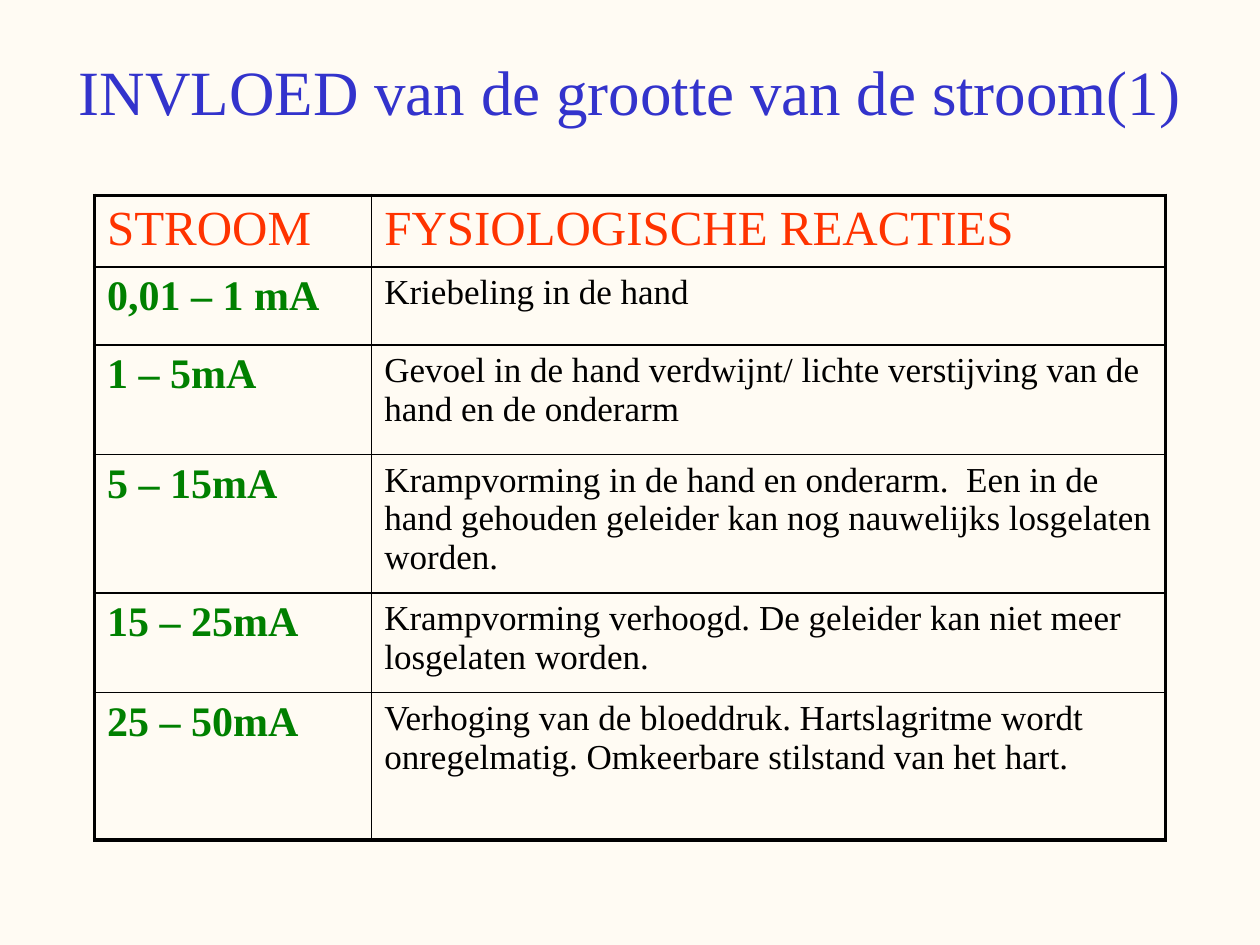
"""Build a slide with a table of physiological reactions to electric current."""
from lxml.etree import SubElement
from pptx import Presentation
from pptx.dml.color import RGBColor
from pptx.enum.text import MSO_ANCHOR, PP_ALIGN
from pptx.oxml.ns import qn
from pptx.util import Inches, Pt

CREAM = RGBColor(0xFF, 0xFB, 0xF3)
BLUE = RGBColor(0x33, 0x33, 0xCC)
RED = RGBColor(0xFF, 0x33, 0x00)
GREEN = RGBColor(0x00, 0x80, 0x00)
BLACK = RGBColor(0x00, 0x00, 0x00)
FONT = "Times New Roman"
THICK, THIN = 2.25, 1

COLUMN_WIDTHS = [2.2, 6.3]
ROW_HEIGHTS = [0.55, 0.62, 0.87, 1.1, 0.79, 1.17]
ROWS = [
    ("STROOM", "FYSIOLOGISCHE REACTIES"),
    ("0,01 – 1 mA", "Kriebeling in de hand"),
    ("1 – 5mA", "Gevoel in de hand verdwijnt/ lichte verstijving van de hand en de onderarm"),
    ("5 – 15mA", "Krampvorming in de hand en onderarm.  Een in de hand gehouden geleider "
     "kan nog nauwelijks losgelaten worden."),
    ("15 – 25mA", "Krampvorming verhoogd. De geleider kan niet meer losgelaten worden."),
    ("25 – 50mA", "Verhoging van de bloeddruk. Hartslagritme wordt onregelmatig. "
     "Omkeerbare stilstand van het hart."),
]
HEADER_FORMAT = {"size": 28, "color": RED}
BODY_FORMATS = [
    {"size": 24, "color": GREEN, "bold": True},
    {"size": 20, "color": BLACK},
]


def write_text(frame, text, size, color, bold=False, align=PP_ALIGN.LEFT):
    frame.word_wrap = True
    paragraph = frame.paragraphs[0]
    paragraph.alignment = align
    run = paragraph.add_run()
    run.text = text
    run.font.name = FONT
    run.font.size = Pt(size)
    run.font.bold = bold
    run.font.color.rgb = color


def draw_borders(cell, widths):
    properties = cell._tc.get_or_add_tcPr()
    for side, width in widths.items():
        line = SubElement(properties, qn(f"a:ln{side}"), w=str(Pt(width)))
        fill = SubElement(line, qn("a:solidFill"))
        SubElement(fill, qn("a:srgbClr"), val=str(BLACK))


presentation = Presentation()
presentation.slide_width = Inches(10)
presentation.slide_height = Inches(7.5)
slide = presentation.slides.add_slide(presentation.slide_layouts[6])
slide.background.fill.solid()
slide.background.fill.fore_color.rgb = CREAM

title = slide.shapes.add_textbox(Inches(0), Inches(0.28), Inches(10), Inches(0.87))
title.text_frame.vertical_anchor = MSO_ANCHOR.MIDDLE
write_text(title.text_frame, "INVLOED van de grootte van de stroom(1)",
           size=36, color=BLUE, align=PP_ALIGN.CENTER)

table = slide.shapes.add_table(
    len(ROWS), len(COLUMN_WIDTHS), Inches(0.75), Inches(1.55),
    Inches(sum(COLUMN_WIDTHS)), Inches(sum(ROW_HEIGHTS))).table
table.first_row = False
table.horz_banding = False
for column, width in zip(table.columns, COLUMN_WIDTHS):
    column.width = Inches(width)
for row, height in zip(table.rows, ROW_HEIGHTS):
    row.height = Inches(height)

last_row, last_column = len(ROWS) - 1, len(COLUMN_WIDTHS) - 1
for row_index, texts in enumerate(ROWS):
    for column_index, text in enumerate(texts):
        cell = table.cell(row_index, column_index)
        text_format = BODY_FORMATS[column_index] if row_index else HEADER_FORMAT
        write_text(cell.text_frame, text, **text_format)
        draw_borders(cell, {
            "L": THICK if column_index == 0 else THIN,
            "R": THICK if column_index == last_column else THIN,
            "T": THICK if row_index == 0 else THIN,
            "B": THICK if row_index == last_row else THIN,
        })
        cell.fill.background()

presentation.save("out.pptx")
